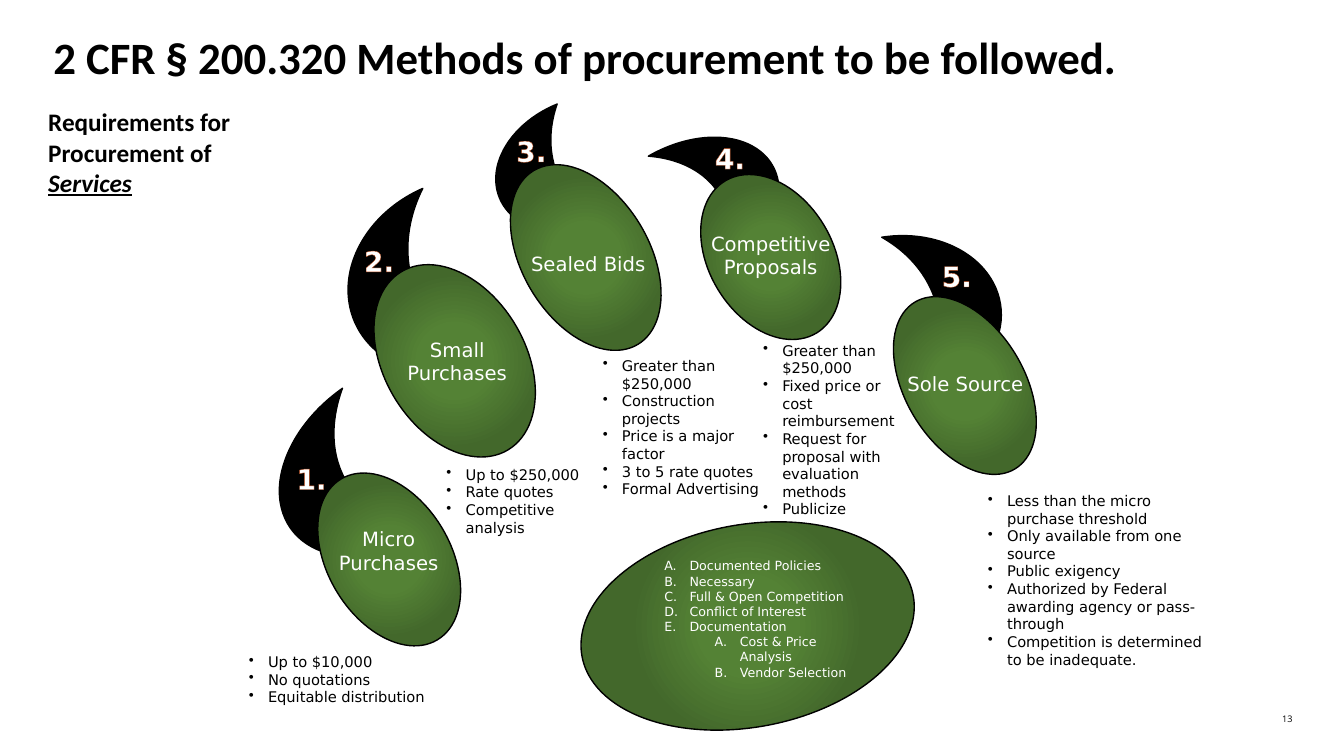
"""Builds a slide on the five procurement methods for services, drawn as paw claws around a shared pad."""
import pptx
import pptx.dml.color
import pptx.enum.shapes
import pptx.enum.text
import pptx.oxml
import pptx.oxml.ns
import pptx.util
from dataclasses import dataclass


@dataclass(frozen=True)
class Theme:
    ink: str = "000000"
    paper: str = "FFFFFF"
    green: str = "548235"
    dark_green: str = "43682B"
    outline: str = "B74919"
    heading: str = "Calibri"
    body: str = "DejaVu Sans"
    footer: str = "Open Sans"
    title_size: float = 32
    subtitle_size: float = 18
    number_size: float = 20
    label_size: float = 14
    list_size: float = 10.5
    pad_size: float = 9
    footer_size: float = 6.5


THEME = Theme()
COLUMNS, ROWS = 133.3, 75
CELL = pptx.util.Inches(0.1)
TOE_TURN = 329.1
NUMBER_SIZE = (5, 4.4)
LABEL_WIDTH = 14.7
SHAPES = pptx.enum.shapes.MSO_SHAPE
ALIGN = pptx.enum.text.PP_ALIGN

TITLE = "2 CFR § 200.320 Methods of procurement to be followed."
SUBTITLE = ("Requirements for Procurement of ", "Services")
PAGE_NUMBER = "13"
METHODS = [
    dict(name="Micro Purchases", claw=(27.7, 40.5, 12.2, 16.8), turn=324.9, curve=0.589,
         number=(28.4, 45.3), toe=(32.5, 46.2, 12.2, 18.6), label=(31.2, 51.8, 5.7),
         notes=(23.7, 64.3, 19.6, 6.4),
         points=["Up to $10,000", "No quotations", "Equitable distribution"]),
    dict(name="Small Purchases", claw=(34.7, 20.2, 11.5, 18.9), turn=336.4, curve=0.589,
         number=(35.1, 23.7), toe=(38.1, 25.5, 14, 20.6), label=(38, 33, 5.7),
         notes=(43.3, 45.7, 16.2, 8.1),
         points=["Up to $250,000", "Rate quotes", "Competitive analysis"]),
    dict(name="Sealed Bids", claw=(49.2, 11.5, 8.8, 12.9), turn=338, curve=0.706,
         number=(50.2, 12.8), toe=(51.8, 15.5, 12.6, 20.1), label=(51, 24.5, 3.4),
         notes=(58.8, 34.9, 17.5, 16.9),
         points=["Greater than $250,000", "Construction projects", "Price is a major factor",
                 "3 to 5 rate quotes", "Formal Advertising"]),
    dict(name="Competitive Proposals", claw=(67.1, 12, 10.2, 13.9), turn=149.9, curve=0.589,
         number=(69.9, 13.5), toe=(70.3, 16.7, 12.3, 17.6), label=(69.1, 22.5, 5.7),
         notes=(74.7, 33.4, 16.2, 18.7),
         points=["Greater than $250,000", "Fixed price or cost reimbursement",
                 "Request for proposal with evaluation methods", "Publicize"]),
    dict(name="Sole Source", claw=(88.7, 22.6, 10.6, 16.8), turn=171, curve=0.589,
         number=(92.4, 25.2), toe=(89.8, 28.6, 11.8, 19.3), label=(88.4, 36.4, 3.4),
         notes=(97, 48.3, 24.4, 18.7),
         points=["Less than the micro purchase threshold", "Only available from one source",
                 "Public exigency", "Authorized by Federal awarding agency or pass-through",
                 "Competition is determined to be inadequate."]),
]
PAD, PAD_TURN, PAD_NOTES = (64.1, 45.4, 20.1, 33.4), 259.6, (64.9, 54.9, 20.2, 13.1)
PAD_POINTS = [("Documented Policies", 0), ("Necessary", 0), ("Full & Open Competition", 0),
              ("Conflict of Interest", 0), ("Documentation", 0),
              ("Cost & Price Analysis", 1), ("Vendor Selection", 1)]
BULLET = '<a:buChar {ns} char="•"/>'
LETTER = '<a:buAutoNum {ns} type="alphaUcPeriod"/>'


def element(markup):
    return pptx.oxml.parse_xml(markup.replace("{ns}", pptx.oxml.ns.nsdecls("a")))


def lengths(place):
    return [round(cells * CELL) for cells in place]


def color(value):
    return pptx.dml.color.RGBColor.from_string(value)


def add_figure(page, kind, place, turn, fill):
    figure = page.shapes.add_shape(kind, *lengths(place))
    figure.shadow.inherit = False
    figure.rotation = turn
    figure.fill.solid()
    figure.fill.fore_color.rgb = color(fill)
    figure.line.color.rgb = color(THEME.ink)
    figure.line.width = pptx.util.Pt(1)
    return figure


def add_green_oval(page, place, turn):
    oval = add_figure(page, SHAPES.OVAL, place, turn, THEME.green)
    stops = "".join(f'<a:gs pos="{share}000"><a:srgbClr val="{tone}"/></a:gs>' for share, tone in
                    ((0, THEME.green), (21, THEME.green), (52, THEME.dark_green)))
    gradient = element(f'<a:gradFill {{ns}} rotWithShape="1"><a:gsLst>{stops}</a:gsLst>'
                       '<a:path path="circle"><a:fillToRect l="50000" t="50000" r="50000" b="50000"/>'
                       '</a:path></a:gradFill>')
    properties = oval._element.spPr
    properties.replace(properties.find(pptx.oxml.ns.qn("a:solidFill")), gradient)


def add_box(page, place, wrap=True):
    frame = page.shapes.add_textbox(*lengths(place)).text_frame
    frame.word_wrap = wrap
    frame.auto_size = pptx.enum.text.MSO_AUTO_SIZE.SHAPE_TO_FIT_TEXT
    return frame


def style(para, face, size, tone, align=ALIGN.LEFT, bold=False):
    para.alignment = align
    font = para.font
    font.name, font.size, font.bold = face, pptx.util.Pt(size), bold
    font.color.rgb = color(tone)


def add_line(page, place, text, *look, wrap=True):
    frame = add_box(page, place, wrap)
    para = frame.paragraphs[0]
    para.text = text
    style(para, *look)
    return frame


def add_list(page, place, points, marker, indent, size, tone):
    frame = add_box(page, place)
    for index, (text, level) in enumerate(points):
        para = frame.add_paragraph() if index else frame.paragraphs[0]
        para.text = text
        para.level = level
        properties = para._p.get_or_add_pPr()
        properties.set("marL", str(pptx.util.Inches(indent + level / 2)))
        properties.set("indent", str(-pptx.util.Inches(indent)))
        properties.append(element(marker))
        style(para, THEME.body, size, tone)


def add_method(page, order, method):
    claw = add_figure(page, SHAPES.MOON, method["claw"], method["turn"], THEME.ink)
    claw.adjustments[0] = method["curve"]
    number = add_line(page, method["number"] + NUMBER_SIZE, f"{order}.", THEME.body,
                      THEME.number_size, THEME.paper, ALIGN.CENTER, True, wrap=False)
    edge = element(f'<a:ln {{ns}} w="{pptx.util.Pt(0.8)}"><a:solidFill>'
                   f'<a:srgbClr val="{THEME.outline}"/></a:solidFill></a:ln>')
    number.paragraphs[0].runs[0]._r.get_or_add_rPr().insert(0, edge)
    add_green_oval(page, method["toe"], TOE_TURN)


def main():
    deck = pptx.Presentation()
    deck.slide_width, deck.slide_height = lengths((COLUMNS, ROWS))
    page = deck.slides.add_slide(deck.slide_layouts[6])

    footer = add_line(page, (124.8, 70.8, 3.4, 1.1), PAGE_NUMBER, THEME.footer,
                      THEME.footer_size, THEME.ink, ALIGN.RIGHT)
    footer.margin_left = footer.margin_right = footer.margin_top = footer.margin_bottom = 0
    add_line(page, (3.8, 2.5, 108.5, 6.4), TITLE, THEME.heading, THEME.title_size,
             THEME.ink, ALIGN.CENTER, True, wrap=False)
    subtitle = add_line(page, (3.8, 10.1, 24.6, 10.1), SUBTITLE[0], THEME.heading,
                        THEME.subtitle_size, THEME.ink, ALIGN.LEFT, True)
    span = subtitle.paragraphs[0].add_run()
    span.text = SUBTITLE[1]
    span.font.italic = span.font.underline = True

    for order, method in enumerate(METHODS, 1):
        add_method(page, order, method)
    for method in METHODS:
        left, top, height = method["label"]
        add_line(page, (left, top, LABEL_WIDTH, height), method["name"], THEME.body,
                 THEME.label_size, THEME.paper, ALIGN.CENTER)
        add_list(page, method["notes"], [(point, 0) for point in method["points"]],
                 BULLET, 0.19, THEME.list_size, THEME.ink)

    add_green_oval(page, PAD, PAD_TURN)
    add_list(page, PAD_NOTES, PAD_POINTS, LETTER, 0.25, THEME.pad_size, THEME.paper)
    deck.save("out.pptx")


if __name__ == "__main__":
    main()
